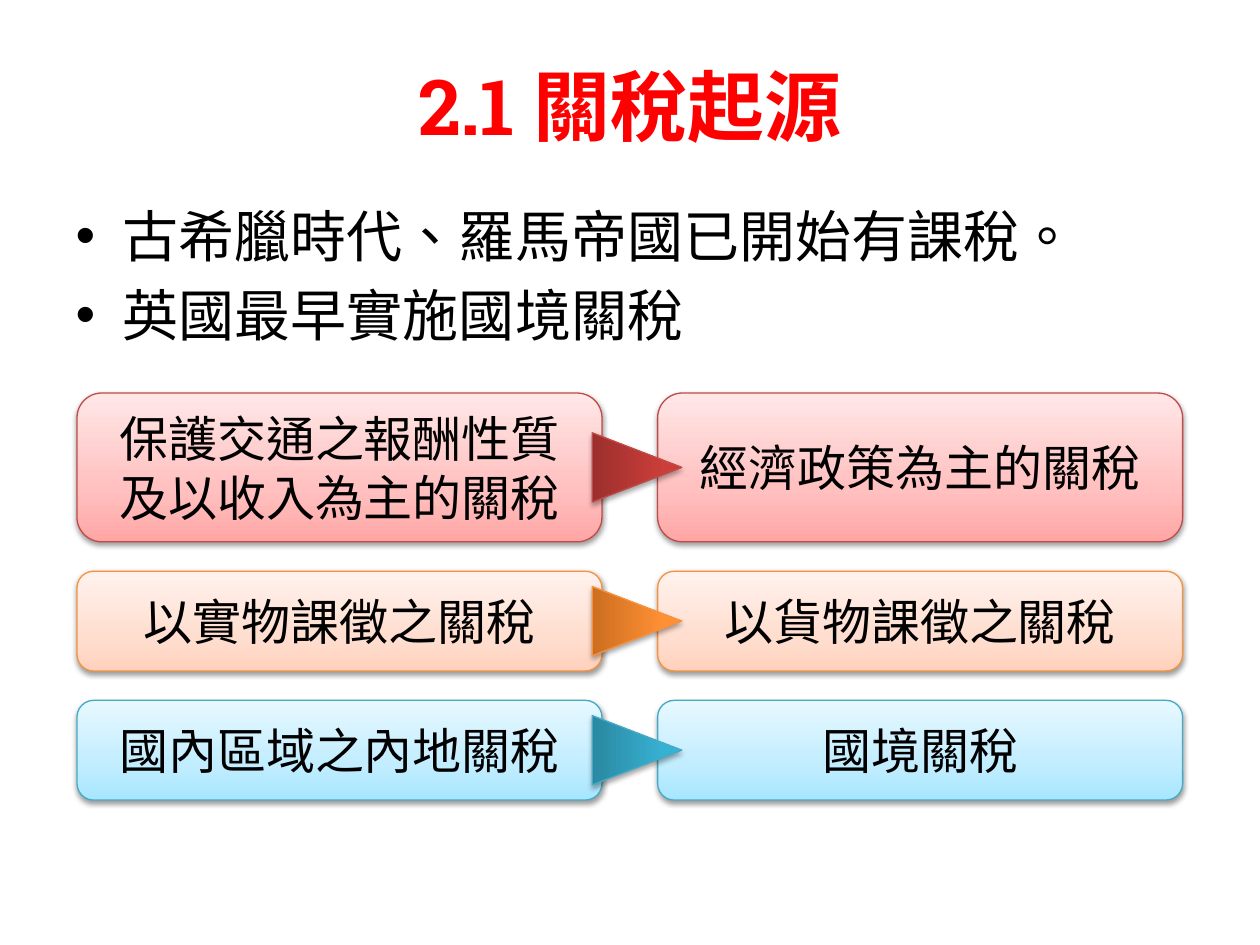
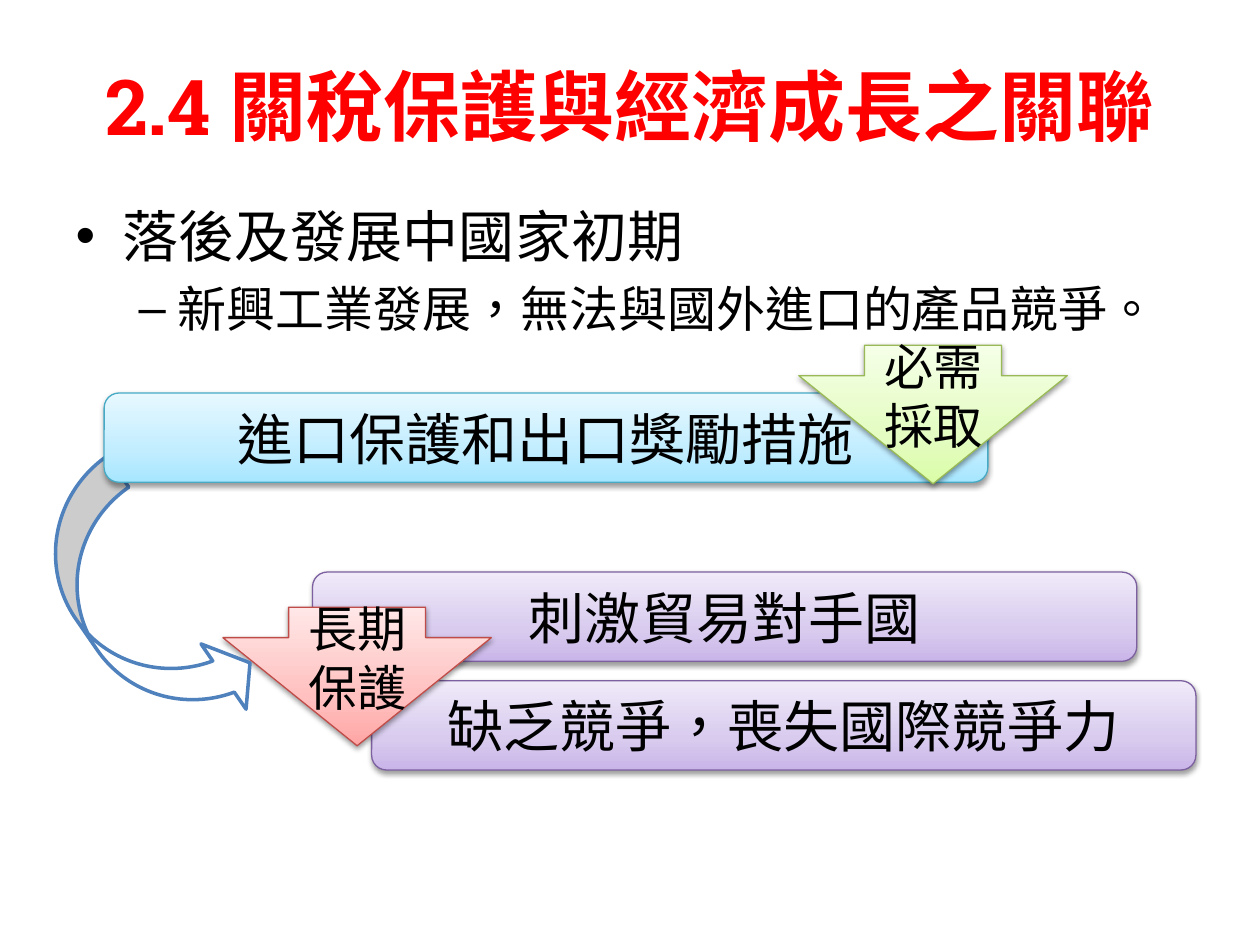
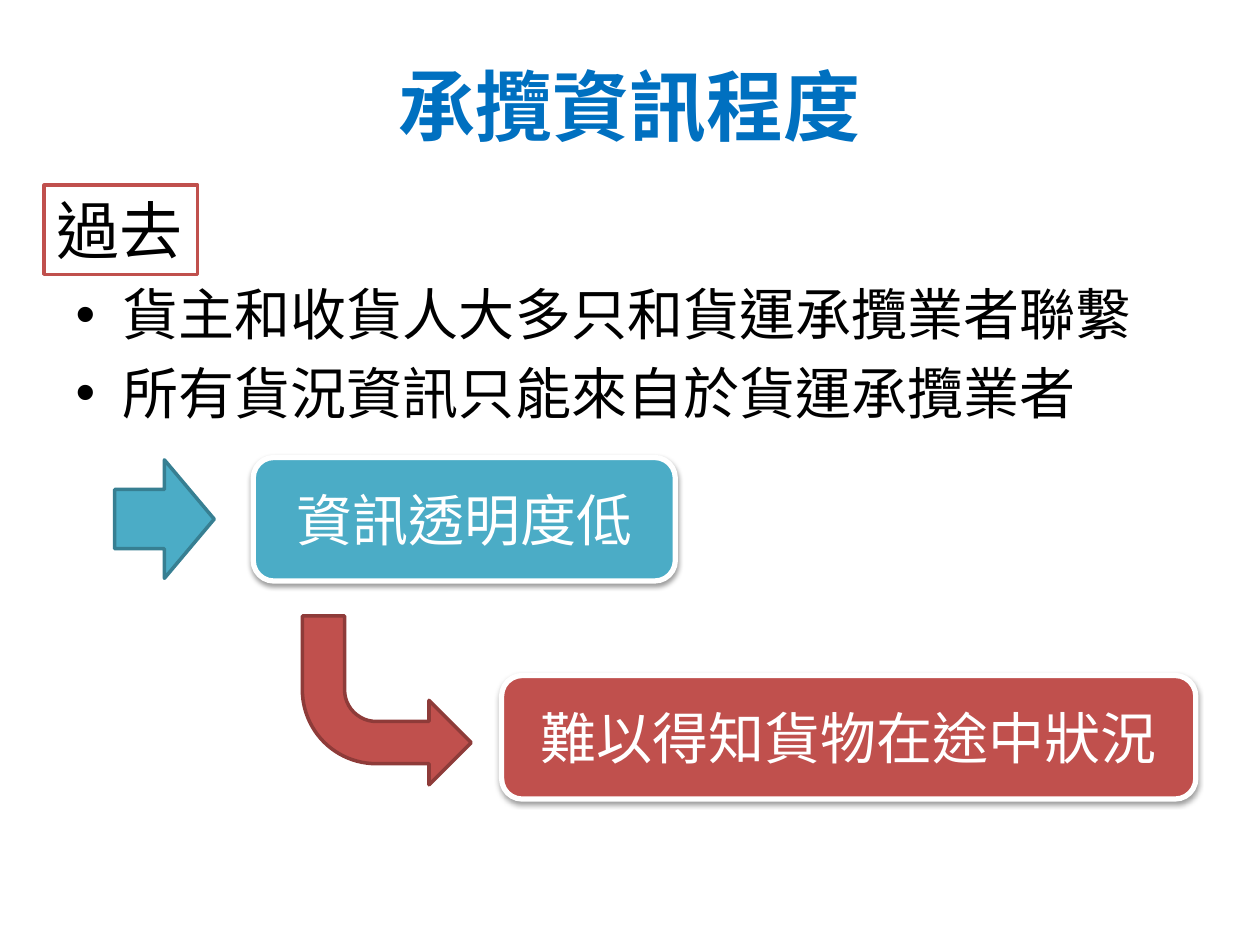
from copy import deepcopy
from dataclasses import dataclass

from lxml import etree
from pptx import Presentation
from pptx.dml.color import RGBColor
from pptx.enum import lang, shapes, text
from pptx.oxml import ns
from pptx.util import Pt

KIND = shapes.MSO_SHAPE
ALIGN = text.PP_ALIGN
ANCHOR = text.MSO_ANCHOR


@dataclass(frozen=True)
class Tone:
    """Gradient colours, from bottom to top, and the line around them."""
    line: str
    stops: tuple
    spots: tuple = (0, 0.35, 1)


@dataclass(frozen=True)
class Theme:
    font: str = "Roboto Slab"
    black: str = "000000"
    white: str = "FFFFFF"
    title: str = "FF0000"
    past: str = "0070C0"
    blue: str = "4F81BD"
    teal: str = "4BACC6"
    teal_edge: str = "377F92"
    brick: str = "C0504D"
    brick_edge: str = "8E3B39"
    head: int = 44
    tag: int = 36
    large: int = 32
    small: int = 28
    levels: tuple = (32, 28)
    thin: float = 0.75
    mid: float = 2
    thick: float = 3
    red: Tone = Tone("BF4C48", ("FFA6A5", "FFC0BF", "FFE7E7"))
    orange: Tone = Tone("F69240", ("FFD2BD", "FFDED0", "FFF2ED"))
    aqua: Tone = Tone("46AAC5", ("A7E6FF", "C1EDFF", "E7F8FF"))
    green: Tone = Tone("98B955", ("DAFDA7", "E4FCC2", "F5FFE7"))
    purple: Tone = Tone("7D60A0", ("C9B5E8", "D8CBEE", "F0EAF9"))
    deep_red: Tone = Tone("BF4C48", ("9C2F2D", "CB3E3A", "CE3B37"), (0, 0.8, 1))
    deep_orange: Tone = Tone("F69240", ("CC6E20", "FF9034", "FF9136"), (0, 0.8, 1))
    deep_aqua: Tone = Tone("46AAC5", ("2A88A2", "37B1D2", "34B4D6"), (0, 0.8, 1))


class Deck:
    def __init__(self, theme):
        self.theme = theme
        self.file = Presentation()
        self.file.slide_width, self.file.slide_height = Pt(720), Pt(540)
        self.slide = None

    def start(self, title, color=None):
        """Add a slide and fill in its title."""
        self.slide = self.file.slides.add_slide(self.file.slide_layouts[1])
        holder = self.slide.shapes.title
        self.place(holder, 36, 15, 648, 90)
        self.fill_in(holder.text_frame, title, self.theme.head, color or self.theme.title)
        holder.text_frame.paragraphs[0].font.bold = True

    def place(self, shape, left, top, width, height):
        shape.left, shape.top = Pt(left), Pt(top)
        shape.width, shape.height = Pt(width), Pt(height)

    def style(self, para, size, color):
        font = para.font
        font.name, font.size = self.theme.font, Pt(size)
        font.color.rgb = RGBColor.from_string(color)
        font.language_id = lang.MSO_LANGUAGE_ID.TRADITIONAL_CHINESE

    def fill_in(self, frame, words, size, color, align=ALIGN.CENTER):
        """Put one styled paragraph into a text frame."""
        para = frame.paragraphs[0]
        para.text, para.alignment = words, align
        self.style(para, size, color)

    def list(self, items, top=111.6):
        """Fill the body with (level, words) pairs."""
        body = self.slide.placeholders[1]
        self.place(body, 36, top, 648, 468 - top)
        frame = body.text_frame
        for index, (level, words) in enumerate(items):
            para = frame.add_paragraph() if index else frame.paragraphs[0]
            para.text, para.level = words, level
            size = self.theme.levels[level]
            para.space_before = Pt(size * 0.2 if index else 0)
            self.style(para, size, self.theme.black)

    def shape(self, kind, box, fill, line, width, home=None):
        """Draw a plain shape, on the slide or in a group."""
        item = (home or self.slide).shapes.add_shape(kind, *map(Pt, box))
        item.shadow.inherit = False
        item.fill.solid()
        item.fill.fore_color.rgb = RGBColor.from_string(fill)
        item.line.color.rgb = RGBColor.from_string(line)
        item.line.width = Pt(width)
        return item

    def shade(self, item, alpha=38, drop=1.6):
        """Cast a soft shadow straight down."""
        effects = item._element.spPr.find(ns.qn("a:effectLst"))
        cast = etree.SubElement(effects, ns.qn("a:outerShdw"), blurRad=str(Pt(3.1)),
                                dist=str(Pt(drop)), dir="5400000", rotWithShape="0")
        color = etree.SubElement(cast, ns.qn("a:srgbClr"), val=self.theme.black)
        etree.SubElement(color, ns.qn("a:alpha"), val=str(alpha * 1000))

    def glossy(self, kind, box, tone, home=None, **shade):
        """Draw a shape with a gradient fill and a shadow."""
        item = self.shape(kind, box, self.theme.white, tone.line, self.theme.thin, home)
        item.fill.gradient()
        item.fill.gradient_angle = 90
        stops = next(item._element.spPr.iter(ns.qn("a:gsLst")))
        stops.append(deepcopy(stops[0]))
        for stop, color, spot in zip(item.fill.gradient_stops, tone.stops, tone.spots):
            stop.color.rgb = RGBColor.from_string(color)
            stop.position = spot
        self.shade(item, **shade)
        return item

    def label(self, item, words, size, color):
        item.text_frame.word_wrap = True
        item.text_frame.vertical_anchor = ANCHOR.MIDDLE
        self.fill_in(item.text_frame, words, size, color)

    def panel(self, words, box, tone, size):
        item = self.glossy(KIND.ROUNDED_RECTANGLE, box, tone)
        self.label(item, words, size, self.theme.black)

    def badge(self, words, box, fill):
        """Draw a flat rounded box with a white rim."""
        look = self.theme
        item = self.shape(KIND.ROUNDED_RECTANGLE, box, fill, look.white, look.thick)
        self.shade(item)
        self.label(item, words, look.large, look.white)

    def drop(self, words, left, top, tone):
        """Draw a down arrow grouped with its label."""
        group = self.slide.shapes.add_group_shape()
        arrow = self.glossy(KIND.DOWN_ARROW, (left, top, 153.4, 79.2), tone, group)
        arrow.adjustments[0], arrow.adjustments[1] = 0.51, 0.78
        note = group.shapes.add_textbox(*map(Pt, (left + 28.5, top - 8.5, 96.5, 97.2)))
        note.text_frame.word_wrap = True
        self.fill_in(note.text_frame, words, self.theme.small, self.theme.black)


def origin(deck):
    look = deck.theme
    deck.start("2.1 關稅起源")
    deck.list([(0, "古希臘時代、羅馬帝國已開始有課稅。"), (0, "英國最早實施國境關稅")])
    rows = [
        ("保護交通之報酬性質及以收入為主的關稅", "經濟政策為主的關稅", 85, look.red, look.deep_red),
        ("以實物課徵之關稅", "以貨物課徵之關稅", 57, look.orange, look.deep_orange),
        ("國內區域之內地關稅", "國境關稅", 57, look.aqua, look.deep_aqua),
    ]
    top, gap = 224.6, 16.8
    wide, tall = 39.6, 51.2
    for before, after, height, pale, deep in rows:
        for words, left in ((before, 44), (after, 375.8)):
            deck.panel(words, (left, top, 300, height), pale, look.small)
        box = (344.2, top + (height - tall) / 2, wide, tall)
        mark = deck.glossy(KIND.ISOSCELES_TRIANGLE, box, deep, alpha=35, drop=1.8)
        mark.rotation = 90
        top += height + gap


def growth(deck):
    look = deck.theme
    deck.start("2.4 關稅保護與經濟成長之關聯")
    deck.list([(0, "落後及發展中國家初期"), (1, "新興工業發展，無法與國外進口的產品競爭。")])
    deck.panel("刺激貿易對手國", (178.6, 326.9, 471, 51), look.purple, look.large)
    deck.panel("缺乏競爭，喪失國際競爭力", (212.4, 389, 471, 51), look.purple, look.large)
    deck.drop("長期保護", 127.4, 347, look.red)
    curve = deck.shape(KIND.CURVED_RIGHT_ARROW, (46.8, 265, 67.7, 166.3),
                       look.white, look.blue, look.mid)
    curve.rotation = 325.4
    for index, value in enumerate((0.32, 0.67, 0.25)):
        curve.adjustments[index] = value
    deck.panel("進口保護和出口獎勵措施", (59.5, 224.6, 505, 51), look.aqua, look.large)
    deck.drop("必需採取", 456.5, 197.3, look.green)


def clarity(deck):
    look = deck.theme
    deck.start("承攬資訊程度", look.past)
    deck.list([(0, "貨主和收貨人大多只和貨運承攬業者聯繫"),
               (0, "所有貨況資訊只能來自於貨運承攬業者")], top=156.4)
    deck.badge("難以得知貨物在途中狀況", (286.6, 386, 396.7, 70.6), look.brick)
    deck.shape(KIND.RIGHT_ARROW, (65.5, 262.8, 56.9, 67.7), look.teal, look.teal_edge, look.mid)
    deck.badge("資訊透明度低", (144.7, 261.4, 241.2, 70.6), look.teal)
    bend = deck.shape(KIND.BENT_ARROW, (172.8, 352, 96.5, 96.5),
                      look.brick, look.brick_edge, look.mid)
    bend._element.spPr.find(ns.qn("a:xfrm")).set("flipV", "1")
    tag = deck.shape(KIND.RECTANGLE, (25.2, 105.8, 87.8, 51), look.white, look.brick, look.mid)
    tag.text_frame.word_wrap = False
    tag.text_frame.vertical_anchor = ANCHOR.TOP
    deck.fill_in(tag.text_frame, "過去", look.tag, look.black, ALIGN.LEFT)


def main():
    deck = Deck(Theme())
    for build in (origin, growth, clarity):
        build(deck)
    deck.file.save("out.pptx")


if __name__ == "__main__":
    main()
